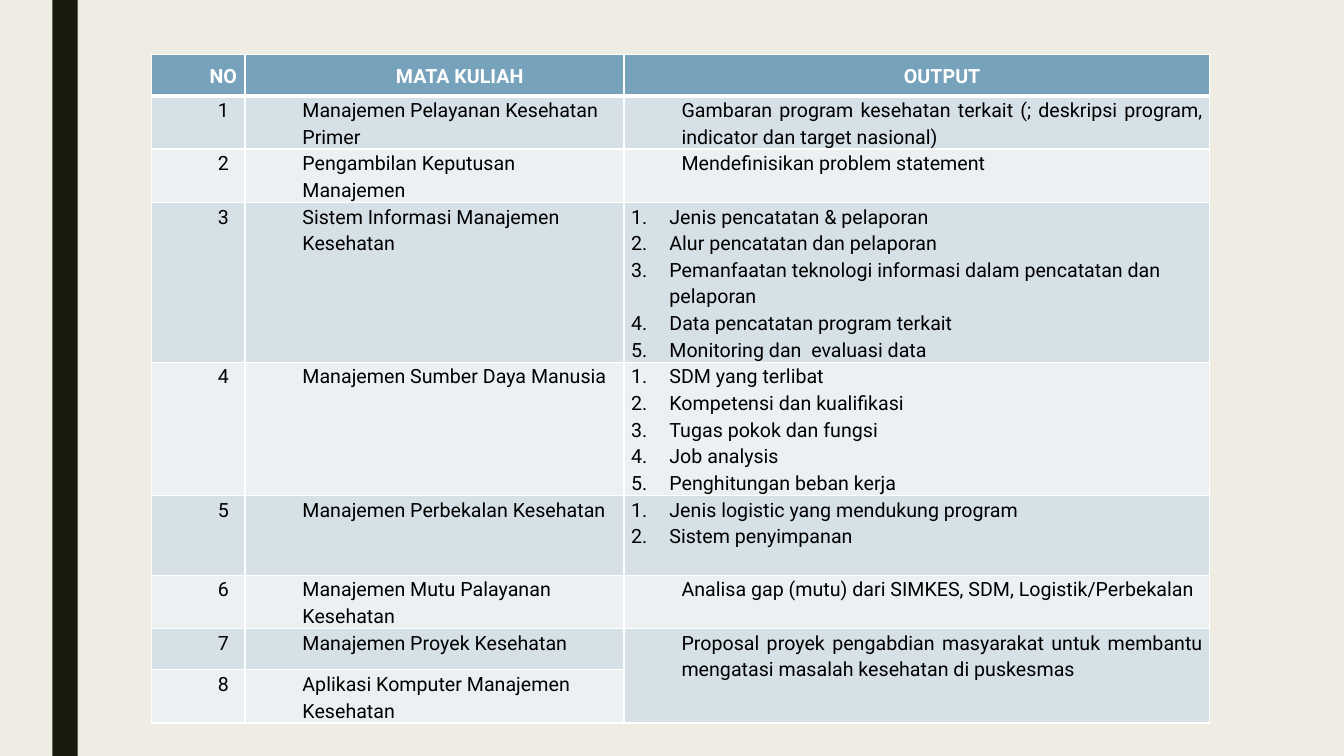
from dataclasses import dataclass

from lxml import etree
from pptx import Presentation
from pptx.dml.color import RGBColor
from pptx.enum.shapes import MSO_SHAPE
from pptx.enum.text import MSO_ANCHOR, PP_ALIGN
from pptx.oxml.ns import qn
from pptx.util import Inches, Pt

RECTANGLE = MSO_SHAPE.RECTANGLE
LEFT, CENTER, JUSTIFY = PP_ALIGN.LEFT, PP_ALIGN.CENTER, PP_ALIGN.JUSTIFY
TOP, MIDDLE = MSO_ANCHOR.TOP, MSO_ANCHOR.MIDDLE
BLANK_LAYOUT = 6


@dataclass(frozen=True)
class Theme:
    background: str = "EFEDE3"
    stripe: str = "191B0E"
    header: str = "77A2BB"
    bands: tuple = ("D6E0E7", "ECF0F3")
    light: str = "FFFFFF"
    dark: str = "000000"
    font: str = "Roboto"
    size: int = 14
    spacing: float = 1.15
    indent: float = 0.5
    number_indent: float = 0.38
    cell_margin: float = 0.07
    line_height: float = 0.264
    min_row: float = 0.41


THEME = Theme()
WIDTH, HEIGHT = 13.33, 7.5
STRIPE_BOX = (0.52, 0, 0.25, HEIGHT)
TABLE_BOX = (1.5, 0.54, 10.5, 6.62)
COLUMN_SHARES = (0.93, 3.76, 5.81)

HEADINGS = ("NO", "MATA KULIAH", "OUTPUT")
COURSES = (
    ("Manajemen Pelayanan Kesehatan Primer", 2, JUSTIFY,
     "Gambaran program kesehatan terkait (; deskripsi program, indicator dan target nasional)"),
    ("Pengambilan Keputusan Manajemen", 2, LEFT, "Mendefinisikan problem statement"),
    ("Sistem Informasi Manajemen Kesehatan", 6, LEFT, (
        "Jenis pencatatan & pelaporan",
        "Alur pencatatan dan pelaporan",
        "Pemanfaatan teknologi informasi dalam pencatatan dan pelaporan",
        "Data pencatatan program terkait",
        "Monitoring dan  evaluasi data")),
    ("Manajemen Sumber Daya Manusia", 5, LEFT, (
        "SDM yang terlibat",
        "Kompetensi dan kualifikasi",
        "Tugas pokok dan fungsi",
        "Job analysis",
        "Penghitungan beban kerja")),
    ("Manajemen Perbekalan Kesehatan", 3, LEFT, (
        "Jenis logistic yang mendukung program",
        "Sistem penyimpanan")),
    ("Manajemen Mutu Palayanan Kesehatan", 2, JUSTIFY,
     "Analisa gap (mutu) dari SIMKES, SDM, Logistik/Perbekalan"),
    ("Manajemen Proyek Kesehatan", 1, JUSTIFY,
     "Proposal proyek pengabdian masyarakat untuk membantu mengatasi masalah kesehatan di puskesmas"),
    ("Aplikasi Komputer Manajemen Kesehatan", 2, LEFT, None),
)


def rgb(value):
    return RGBColor.from_string(value)


def write(frame, text, align=LEFT, color=THEME.dark, bold=False):
    numbered = isinstance(text, tuple)
    indent = THEME.number_indent if numbered else THEME.indent
    for index, line in enumerate(text if numbered else (text,)):
        paragraph = frame.add_paragraph() if index else frame.paragraphs[0]
        properties = paragraph._p.get_or_add_pPr()
        properties.set("marL", str(Inches(indent)))
        properties.set("indent", str(-Inches(indent) if numbered else 0))
        if numbered:
            etree.SubElement(properties, qn("a:buAutoNum"), type="arabicPeriod")
        paragraph.alignment = align
        paragraph.line_spacing = THEME.spacing
        run = paragraph.add_run()
        run.text = line
        run.font.name = THEME.font
        run.font.size = Pt(THEME.size)
        run.font.bold = bold
        run.font.color.rgb = rgb(color)


def style_cell(cell, fill, anchor=TOP, bottom_width=1):
    cell.margin_left = cell.margin_right = Inches(THEME.cell_margin)
    cell.margin_top = cell.margin_bottom = 0
    cell.vertical_anchor = anchor
    properties = cell._tc.get_or_add_tcPr()
    for side in "LRTB":
        width = bottom_width if side == "B" else 1
        border = etree.SubElement(properties, qn(f"a:ln{side}"), w=str(Pt(width)))
        solid = etree.SubElement(border, qn("a:solidFill"))
        etree.SubElement(solid, qn("a:srgbClr"), val=THEME.light)
    cell.fill.solid()
    cell.fill.fore_color.rgb = rgb(fill)


def add_stripe(slide, box):
    stripe = slide.shapes.add_shape(RECTANGLE, *map(Inches, box))
    stripe.shadow.inherit = False
    stripe.fill.solid()
    stripe.fill.fore_color.rgb = rgb(THEME.stripe)
    stripe.line.fill.background()


def add_course_table(slide, box):
    table = slide.shapes.add_table(
        len(COURSES) + 1, len(HEADINGS), *map(Inches, box)).table
    for column, share in zip(table.columns, COLUMN_SHARES):
        column.width = Inches(box[2] * share / sum(COLUMN_SHARES))

    table.rows[0].height = Inches(THEME.min_row)
    for column, heading in enumerate(HEADINGS):
        cell = table.cell(0, column)
        style_cell(cell, THEME.header, anchor=MIDDLE, bottom_width=3)
        write(cell.text_frame, heading, align=CENTER, color=THEME.light, bold=True)

    for number, (course, lines, output_align, output) in enumerate(COURSES, 1):
        table.rows[number].height = Inches(max(THEME.min_row, lines * THEME.line_height))
        entries = ((str(number), CENTER), (course, LEFT), (output, output_align))
        for column, (text, align) in enumerate(entries):
            cell = table.cell(number, column)
            style_cell(cell, THEME.bands[(number - 1) % 2])
            if text:
                write(cell.text_frame, text, align=align)

    last = len(COURSES)
    table.cell(last - 1, 2).merge(table.cell(last, 2))


def main():
    deck = Presentation()
    deck.slide_width, deck.slide_height = Inches(WIDTH), Inches(HEIGHT)
    slide = deck.slides.add_slide(deck.slide_layouts[BLANK_LAYOUT])
    slide.background.fill.solid()
    slide.background.fill.fore_color.rgb = rgb(THEME.background)
    add_stripe(slide, STRIPE_BOX)
    add_course_table(slide, TABLE_BOX)
    deck.save("out.pptx")


if __name__ == "__main__":
    main()
